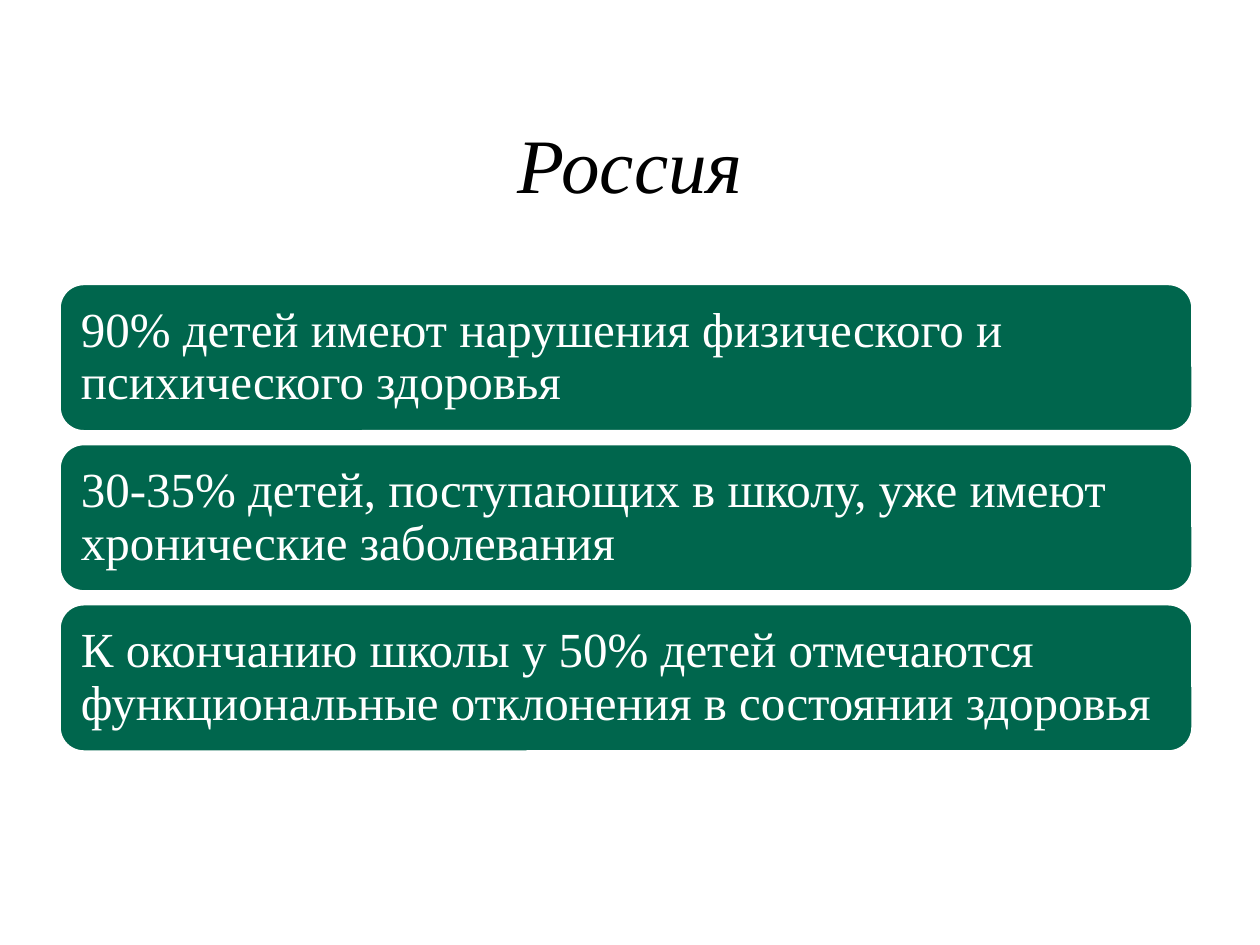
from pptx import Presentation
from pptx.dml.color import RGBColor
from pptx.enum.shapes import MSO_SHAPE
from pptx.enum.text import MSO_ANCHOR, PP_ALIGN
from pptx.util import Pt

ROUND = MSO_SHAPE.ROUNDED_RECTANGLE
MIDDLE = MSO_ANCHOR.MIDDLE
LEFT, CENTER = PP_ALIGN.LEFT, PP_ALIGN.CENTER
FONT = "Times New Roman"
GREEN, WHITE, BLACK = "00664D", "FFFFFF", "000000"
FACTS = [
    "90% детей имеют нарушения физического и психического здоровья",
    "30-35% детей, поступающих в школу, уже имеют хронические заболевания",
    "К окончанию школы у 50% детей отмечаются функциональные отклонения в состоянии здоровья",
]


def rgb(color):
    return RGBColor.from_string(color)


def write(tf, text, size, color, align=LEFT, italic=False, spacing=1.0, after=0):
    tf.word_wrap = True
    tf.vertical_anchor = MIDDLE
    p = tf.paragraphs[0]
    p.alignment = align
    p.line_spacing = spacing
    p.space_after = Pt(after)
    r = p.add_run()
    r.text = text
    r.font.name = FONT
    r.font.size = Pt(size)
    r.font.italic = italic
    r.font.color.rgb = rgb(color)


def add_title(s, text):
    sp = s.shapes.add_textbox(Pt(54), Pt(48), Pt(612), Pt(90))
    write(sp.text_frame, text, 44, BLACK, align=CENTER, italic=True)


def add_fact(s, text, top):
    sp = s.shapes.add_shape(ROUND, Pt(33.75), Pt(top), Pt(648), Pt(84.75))
    sp.shadow.inherit = False
    sp.fill.solid()
    sp.fill.fore_color.rgb = rgb(GREEN)
    sp.line.color.rgb = rgb(WHITE)
    sp.line.width = Pt(2)
    tf = sp.text_frame
    tf.margin_left = tf.margin_right = tf.margin_top = tf.margin_bottom = Pt(8.4)
    write(tf, text, 28, WHITE, spacing=0.9, after=9.8)


def main():
    prs = Presentation()
    prs.slide_width, prs.slide_height = Pt(720), Pt(540)
    s = prs.slides.add_slide(prs.slide_layouts[6])
    add_title(s, "Россия")
    for i, fact in enumerate(FACTS):
        add_fact(s, fact, 162 + i * 91.5)
    prs.save("out.pptx")


if __name__ == "__main__":
    main()
